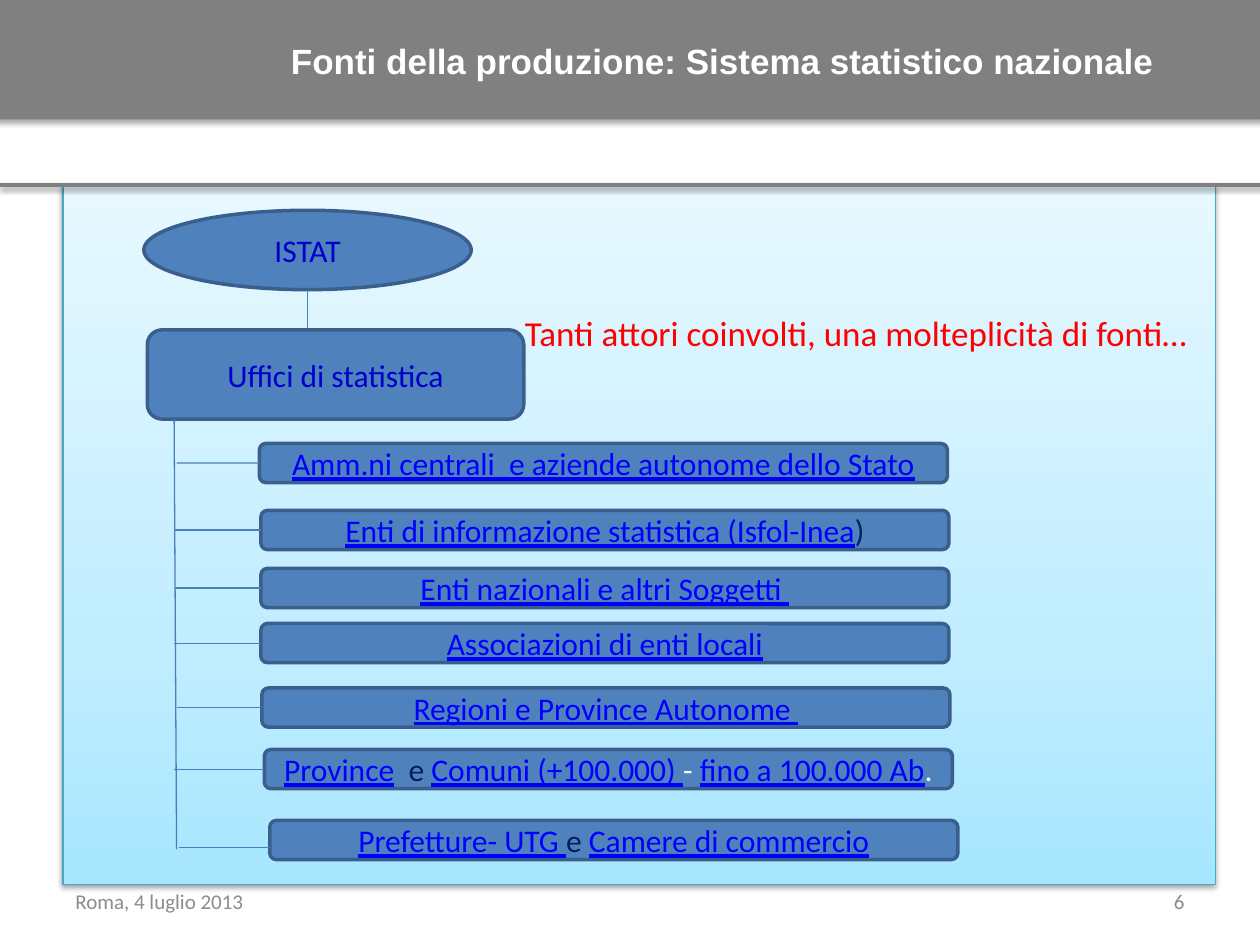
from copy import deepcopy

from lxml.etree import SubElement
from pptx import Presentation
from pptx.dml.color import RGBColor
from pptx.enum.shapes import MSO_CONNECTOR, MSO_SHAPE
from pptx.enum.text import MSO_ANCHOR, PP_ALIGN
from pptx.oxml.ns import qn
from pptx.util import Cm, Pt

RECT, OVAL = MSO_SHAPE.RECTANGLE, MSO_SHAPE.OVAL
ROUND, STRAIGHT = MSO_SHAPE.ROUNDED_RECTANGLE, MSO_CONNECTOR.STRAIGHT
LEFT, MID, RIGHT = PP_ALIGN.LEFT, PP_ALIGN.CENTER, PP_ALIGN.RIGHT
TOP, MIDDLE = MSO_ANCHOR.TOP, MSO_ANCHOR.MIDDLE

WHITE = RGBColor(0xFF, 0xFF, 0xFF)
GRAY = RGBColor(0x80, 0x80, 0x80)
PALE = RGBColor(0x8C, 0x8C, 0x8C)
RED = RGBColor(0xFF, 0x00, 0x00)
BLUE = RGBColor(0x4F, 0x81, 0xBD)
EDGE = RGBColor(0x3A, 0x5F, 0x8C)
WIRE = RGBColor(0x4B, 0x7E, 0xBC)
TEAL = RGBColor(0x46, 0xAA, 0xC5)
INK = RGBColor(0x00, 0x00, 0xCC)
LINK = RGBColor(0x00, 0x00, 0xFF)
NAVY = RGBColor(0x00, 0x20, 0x60)
SKY = [
    (0, RGBColor(0xA7, 0xE6, 0xFF)),
    (0.35, RGBColor(0xC1, 0xED, 0xFF)),
    (1, RGBColor(0xE7, 0xF8, 0xFF)),
]


class Slide:
    font = "Calibri"

    def __init__(self, deck):
        self.slide = deck.slides.add_slide(deck.slide_layouts[5])
        self.shapes = self.slide.shapes

    def shade(self, shape, alpha=None, dist=1.6):
        """Give a soft shadow below, or none when alpha is missing."""
        effect = SubElement(shape.element.spPr, qn("a:effectLst"))
        if alpha:
            shadow = SubElement(effect, qn("a:outerShdw"), blurRad=str(Pt(3.1)),
                                dist=str(Pt(dist)), dir="5400000", rotWithShape="0")
            color = SubElement(shadow, qn("a:srgbClr"), val="000000")
            SubElement(color, qn("a:alpha"), val=str(alpha * 1000))

    def label(self, shape, runs, size, color, align=MID, anchor=MIDDLE, face=None):
        """Fill a shape with one line; a run is (text, color, is link)."""
        frame = shape.text_frame
        frame.word_wrap = True
        frame.vertical_anchor = anchor
        para = frame.paragraphs[0]
        para.alignment = align
        para.font.name, para.font.size = face or self.font, Pt(size)
        para.font.color.rgb = color
        for text, tint, link in runs:
            run = para.add_run()
            run.text = text
            if tint != color:
                run.font.color.rgb = tint
            if link:
                run.font.underline = True
        return para

    def title(self, text, x, y, w, h, bar):
        head = self.shapes.title
        head.left, head.top, head.width, head.height = Cm(x), Cm(y), Cm(w), Cm(h)
        para = self.label(head, [(text, WHITE, False)], 20, WHITE, face="Arial")
        para.font.bold = True
        bar.element.addnext(head.element)

    def bar(self, x, y, w, h):
        bar = self.shapes.add_shape(RECT, Cm(x), Cm(y), Cm(w), Cm(h))
        bar.fill.solid()
        bar.fill.fore_color.rgb = GRAY
        bar.line.fill.background()
        self.shade(bar, 35, 1.8)
        return bar

    def panel(self, x, y, w, h):
        panel = self.shapes.add_shape(RECT, Cm(x), Cm(y), Cm(w), Cm(h))
        panel.fill.gradient()
        panel.fill.gradient_angle = 90
        first = panel.element.spPr.find(".//" + qn("a:gs"))
        first.addnext(deepcopy(first))
        for stop, (place, color) in zip(panel.fill.gradient_stops, SKY):
            stop.position = place
            stop.color.rgb = color
        panel.line.color.rgb, panel.line.width = TEAL, Pt(0.75)
        self.shade(panel, 38)
        return panel

    def node(self, kind, x, y, w, h, runs, color=INK):
        node = self.shapes.add_shape(kind, Cm(x), Cm(y), Cm(w), Cm(h))
        node.fill.solid()
        node.fill.fore_color.rgb = BLUE
        node.line.color.rgb, node.line.width = EDGE, Pt(2)
        self.shade(node)
        self.label(node, runs, 18, color)
        return node

    def line(self, x1, y1, x2, y2, color=WIRE, width=0.75, alpha=None):
        line = self.shapes.add_connector(STRAIGHT, Cm(x1), Cm(y1), Cm(x2), Cm(y2))
        line.line.color.rgb, line.line.width = color, Pt(width)
        self.shade(line, alpha)
        return line

    def note(self, text, x, align):
        box = self.shapes.add_textbox(Cm(x), Cm(17.65), Cm(5.92), Cm(1.02))
        self.label(box, [(text, PALE, False)], 12, PALE, align)


# Rows: box left, box top, branch start, runs
ROWS = [
    (5.23, 8.94, 3.56, [("Amm.ni centrali  e aziende autonome dello Stato", LINK, True)]),
    (5.26, 10.29, 3.51, [("Enti di informazione statistica (Isfol-Inea", LINK, True),
                         (")", NAVY, False)]),
    (5.26, 11.46, 3.53, [("Enti nazionali e altri Soggetti ", LINK, True)]),
    (5.26, 12.57, 3.51, [("Associazioni di enti locali", LINK, True)]),
    (5.28, 13.87, 3.56, [("Regioni e Province Autonome ", LINK, True)]),
    (5.33, 15.11, 3.51, [("Province", LINK, True), ("  e ", NAVY, False),
                         ("Comuni (+100.000) ", LINK, True), ("- ", WHITE, False),
                         ("fino a 100.000 Ab", LINK, True), (".", WHITE, False)]),
    (5.44, 16.54, 3.61, [("Prefetture- UTG ", LINK, True), ("e ", NAVY, False),
                         ("Camere di commercio", LINK, True)]),
]
ROW_W, ROW_H = 13.87, 0.79
LAST_Y = 17.09


def main():
    deck = Presentation()
    deck.slide_width, deck.slide_height = Cm(25.4), Cm(19.05)
    page = Slide(deck)

    # Header
    bar = page.bar(-0.3, -0.08, 25.76, 2.49)
    page.title("Fonti della produzione: Sistema statistico nazionale",
               4.9, -0.08, 19.33, 2.59, bar)

    # Panel with its remark, and the rule on its top edge
    panel = page.panel(1.27, 3.73, 23.24, 14.1)
    page.label(panel, [("Tanti attori coinvolti, una molteplicità di fonti…", RED, False)],
               20, RED, RIGHT, TOP)
    panel.text_frame.margin_top = Cm(2.56)
    panel.text_frame.margin_right = Cm(0.58)
    page.line(0, 3.73, 25.7, 3.73, GRAY, 2, 38)

    # Top of the tree
    page.node(OVAL, 2.9, 4.24, 6.6, 1.6, [("ISTAT", INK, False)])
    page.line(6.2, 5.84, 6.2, 6.65)
    page.node(ROUND, 2.97, 6.65, 7.59, 1.8, [("Uffici di statistica", INK, False)])
    page.line(3.51, 8.46, 3.56, 17.12)

    # Branches; the last one meets its box below the middle
    for x, y, start, runs in ROWS:
        box = page.node(ROUND, x, y, ROW_W, ROW_H, runs, LINK)
        if y == ROWS[-1][1]:
            page.line(start, LAST_Y, x, LAST_Y)
        else:
            mid = y + ROW_H / 2
            page.line(start, mid, x, mid).end_connect(box, 1)

    # Footer
    page.note("Roma, 4 luglio 2013", 1.27, LEFT)
    page.note("6", 18.21, RIGHT)

    deck.save("out.pptx")


if __name__ == "__main__":
    main()
